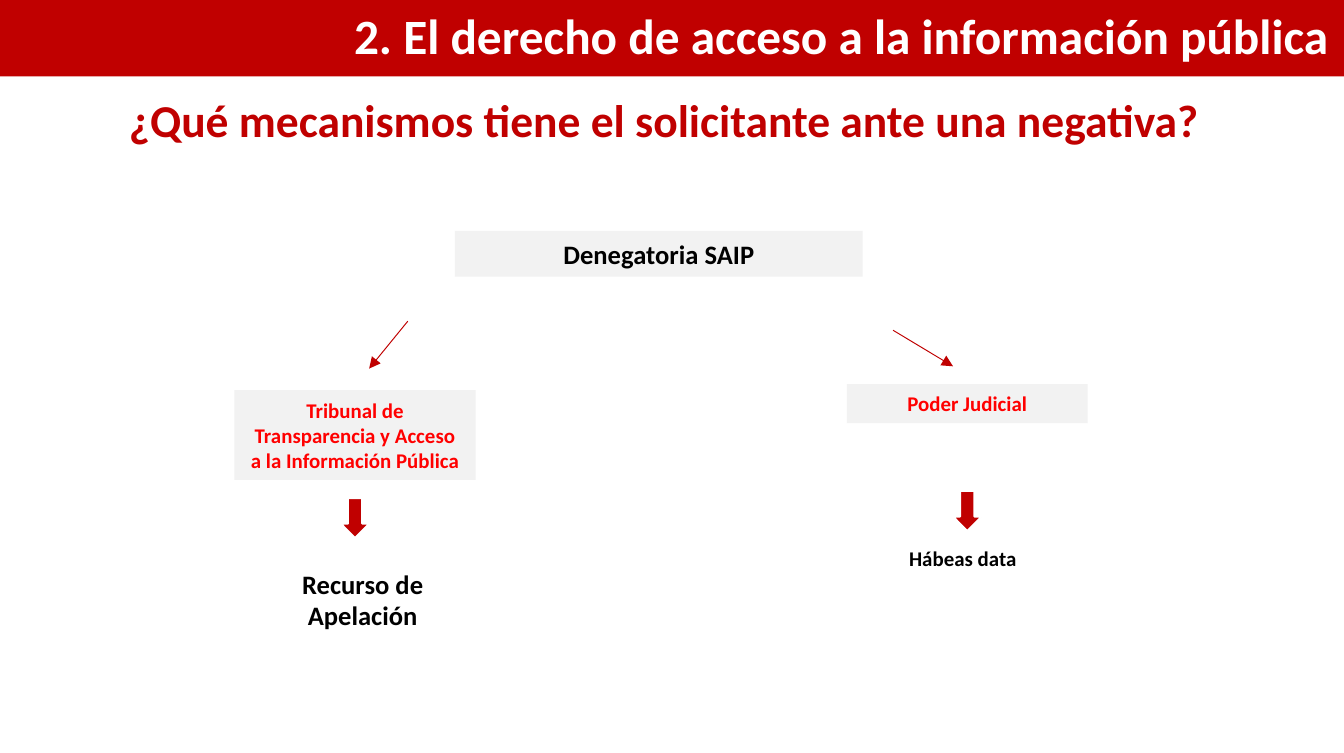
from dataclasses import dataclass

from lxml.etree import SubElement
from pptx import Presentation
from pptx.dml.color import RGBColor
from pptx.enum.shapes import MSO_CONNECTOR, MSO_SHAPE
from pptx.enum.text import MSO_ANCHOR, MSO_AUTO_SIZE, PP_ALIGN
from pptx.oxml.ns import qn
from pptx.util import Pt


@dataclass(frozen=True)
class Theme:
    font: str = "Calibri"
    accent: str = "C00000"
    alert: str = "FF0000"
    panel: str = "F2F2F2"
    white: str = "FFFFFF"
    black: str = "000000"
    title_size: float = 26
    question_size: float = 24
    large: float = 14
    small: float = 11


class SlideBuilder:
    def __init__(self, slide, theme):
        self.slide = slide
        self.theme = theme

    def place(self, shape, box):
        for side, length in zip(("left", "top", "width", "height"), box):
            setattr(shape, side, Pt(length))

    def fill(self, shape, color):
        shape.fill.solid()
        shape.fill.fore_color.rgb = RGBColor.from_string(color)

    def outline(self, shape, color, width):
        shape.line.color.rgb = RGBColor.from_string(color)
        shape.line.width = Pt(width)

    def set_text(self, shape, text, size, color, anchor, align=PP_ALIGN.CENTER, spacing=1.0):
        frame = shape.text_frame
        frame.text = text
        paragraph = frame.paragraphs[0]
        font = paragraph.runs[0].font
        formats = (
            (frame, {"word_wrap": True, "auto_size": MSO_AUTO_SIZE.NONE,
                     "vertical_anchor": anchor}),
            (paragraph, {"alignment": align, "line_spacing": spacing,
                         "space_before": Pt(0)}),
            (font, {"name": self.theme.font, "size": Pt(size), "bold": True}),
        )
        for target, values in formats:
            for attribute, value in values.items():
                setattr(target, attribute, value)
        font.color.rgb = RGBColor.from_string(color)
        return paragraph

    def title(self, text, box):
        banner = self.slide.shapes.title
        self.place(banner, box)
        self.fill(banner, self.theme.accent)
        self.set_text(banner, text, self.theme.title_size, self.theme.white,
                      MSO_ANCHOR.MIDDLE, PP_ALIGN.RIGHT, 0.9)

    def question(self, text, box):
        """Fill the body placeholder with one centred line without a bullet."""
        body = self.slide.placeholders[1]
        self.place(body, box)
        paragraph = self.set_text(body, text, self.theme.question_size,
                                  self.theme.accent, MSO_ANCHOR.TOP, spacing=0.9)
        properties = paragraph._p.get_or_add_pPr()
        properties.set("marL", "0")
        properties.set("indent", "0")
        SubElement(properties, qn("a:buNone"))

    def shape(self, kind, box, color):
        shape = self.slide.shapes.add_shape(kind, *map(Pt, box))
        shape.shadow.inherit = False
        self.fill(shape, color)
        return shape

    def panel(self, text, box, size, color):
        panel = self.shape(MSO_SHAPE.RECTANGLE, box, self.theme.panel)
        panel.line.fill.background()
        self.set_text(panel, text, size, color, MSO_ANCHOR.MIDDLE)

    def remedy(self, text, box, size):
        remedy = self.shape(MSO_SHAPE.ROUNDED_RECTANGLE, box, self.theme.white)
        self.outline(remedy, self.theme.white, 1)
        self.set_text(remedy, text, size, self.theme.black, MSO_ANCHOR.TOP)

    def down_arrow(self, left, top):
        arrow = self.shape(MSO_SHAPE.DOWN_ARROW, (left, top, 15, 21), self.theme.accent)
        self.outline(arrow, self.theme.white, 1)

    def branch(self, start, end):
        branch = self.slide.shapes.add_connector(
            MSO_CONNECTOR.STRAIGHT, *map(Pt, (*start, *end)))
        self.outline(branch, self.theme.accent, 0.5)
        SubElement(branch.line._get_or_add_ln(), qn("a:tailEnd"), type="triangle")
        SubElement(branch._element.spPr, qn("a:effectLst"))


def main():
    theme = Theme()
    deck = Presentation()
    deck.slide_width, deck.slide_height = Pt(708.5), Pt(396.7)
    builder = SlideBuilder(deck.slides.add_slide(deck.slide_layouts[1]), theme)

    builder.title("2. El derecho de acceso a la información pública", (0, 0, 708.5, 40.3))
    builder.question("¿Qué mecanismos tiene el solicitante ante una negativa?",
                     (54, 48.2, 592, 24.5))

    builder.panel("Denegatoria SAIP", (239.8, 121.7, 215, 24), theme.large, theme.black)
    for authority, box in (
        ("Tribunal de Transparencia y Acceso a la Información Pública",
         (123.6, 205.5, 127.2, 47.4)),
        ("Poder Judicial", (446.4, 202.3, 127, 20.6)),
    ):
        builder.panel(authority, box, theme.small, theme.alert)

    builder.remedy("Hábeas data", (422.6, 281.5, 170, 52.5), theme.small)
    builder.remedy("Recurso de Apelación", (131.8, 292.3, 118.8, 64), theme.large)

    for left, top in ((179.7, 262.4), (502.4, 258.7)):
        builder.down_arrow(left, top)
    for start, end in (((215, 169.2), (194.6, 194.2)), ((470.8, 174), (502.4, 193))):
        builder.branch(start, end)

    deck.save("out.pptx")


if __name__ == "__main__":
    main()
